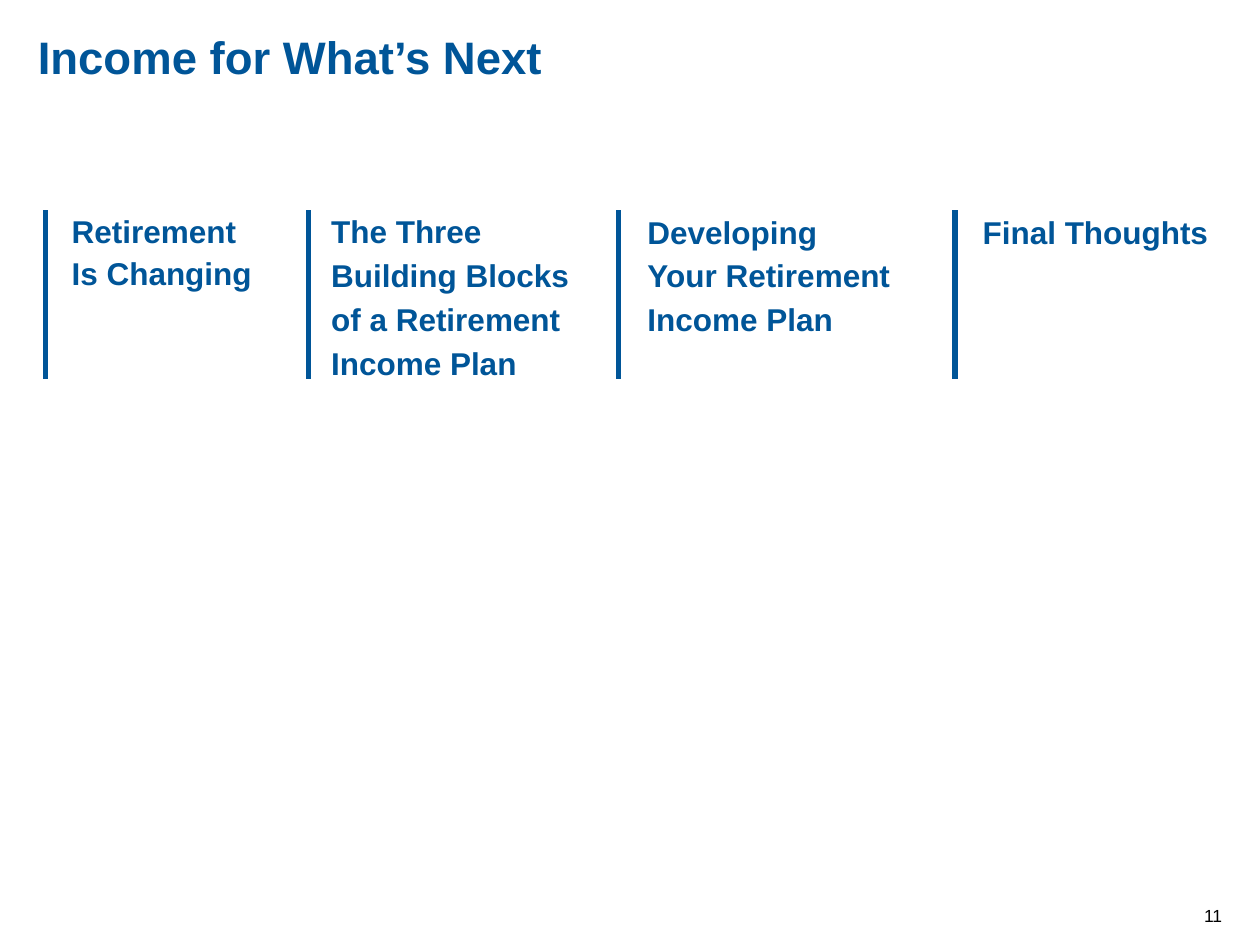
import dataclasses

import lxml.etree
import pptx
import pptx.dml.color
import pptx.enum.shapes
import pptx.enum.text
import pptx.oxml.ns
import pptx.slide
import pptx.text.text
import pptx.util

Inches = pptx.util.Inches
Pt = pptx.util.Pt
Anchor = pptx.enum.text.MSO_ANCHOR
Align = pptx.enum.text.PP_ALIGN
AutoSize = pptx.enum.text.MSO_AUTO_SIZE

COLORS = {"blue": "005598", "black": "000000"}
RULE_TOP, RULE_BOTTOM = 1.67, 3.01
FLUSH_FRAME = {
    "word_wrap": True,
    "auto_size": AutoSize.NONE,
    "margin_left": 0,
    "margin_top": 0,
    "margin_right": 0,
    "margin_bottom": 0,
}


@dataclasses.dataclass(frozen=True)
class Topic:
    """An agenda topic with the vertical rule at its left."""

    rule_left: float
    left: float
    top: float
    width: float
    height: float
    spacing: int
    paragraphs: tuple[tuple[str, ...], ...]


TOPICS = (
    Topic(0.36, 0.47, 1.6, 2.23, 0.77, 24, (("Retirement", "Is Changing"),)),
    Topic(2.45, 2.53, 1.59, 2.66, 1.5, 25,
          (("The Three", "Building Blocks", "of a Retirement"), ("Income Plan",))),
    Topic(4.91, 5.04, 1.59, 2.48, 1.15, 25,
          (("Developing", "Your Retirement Income Plan"),)),
    Topic(7.58, 7.7, 1.61, 2.48, 0.41, 24, (("Final Thoughts",),)),
)


def apply_format(target: object, values: dict) -> None:
    """Set each named attribute on the target."""
    for name, value in values.items():
        setattr(target, name, value)


def write_lines(para: pptx.text.text._Paragraph, lines: tuple[str, ...],
                size: int, color: str, bold: bool) -> None:
    """Fill a paragraph with formatted lines."""
    for index, line in enumerate(lines):
        if index:
            para.add_line_break()
        span = para.add_run()
        span.text = line
        apply_format(span.font, {"name": "Arial", "size": Pt(size), "bold": bold})
        span.font.color.rgb = pptx.dml.color.RGBColor.from_string(COLORS[color])


def draw_title(page: pptx.slide.Slide, text: str) -> None:
    """Place and fill the title placeholder."""
    box = page.shapes.title
    apply_format(box, {"left": Inches(0.3), "top": Inches(0.23),
                       "width": Inches(7), "height": Inches(0.8)})
    apply_format(box.text_frame, FLUSH_FRAME | {"vertical_anchor": Anchor.TOP})
    para = box.text_frame.paragraphs[0]
    para.alignment = Align.LEFT
    write_lines(para, (text,), 26, "blue", True)


def draw_page_number(page: pptx.slide.Slide, text: str) -> None:
    """Write the page number in the lower right corner."""
    box = page.shapes.add_textbox(Inches(9.3), Inches(7.15), Inches(0.4), Inches(0.2))
    apply_format(box.text_frame, FLUSH_FRAME | {"vertical_anchor": Anchor.BOTTOM})
    para = box.text_frame.paragraphs[0]
    para.alignment = Align.RIGHT
    write_lines(para, (text,), 10, "black", False)


def draw_topic(page: pptx.slide.Slide, topic: Topic) -> None:
    """Draw a topic's text and its vertical rule."""
    box = page.shapes.add_textbox(Inches(topic.left), Inches(topic.top),
                                  Inches(topic.width), Inches(topic.height))
    frame = box.text_frame
    apply_format(frame, {"word_wrap": True, "auto_size": AutoSize.SHAPE_TO_FIT_TEXT})
    for index, lines in enumerate(topic.paragraphs):
        para = frame.add_paragraph() if index else frame.paragraphs[0]
        para.line_spacing = Pt(topic.spacing)
        write_lines(para, lines, 18, "blue", True)

    rule = page.shapes.add_connector(
        pptx.enum.shapes.MSO_CONNECTOR.STRAIGHT,
        Inches(topic.rule_left), Inches(RULE_TOP),
        Inches(topic.rule_left), Inches(RULE_BOTTOM))
    rule.line.width = Pt(3)
    rule.line.color.rgb = pptx.dml.color.RGBColor.from_string(COLORS["blue"])
    lxml.etree.SubElement(rule.element.spPr, pptx.oxml.ns.qn("a:effectLst"))


def main() -> None:
    """Build and save the agenda slide."""
    deck = pptx.Presentation()
    apply_format(deck, {"slide_width": Inches(10), "slide_height": Inches(7.5)})
    page = deck.slides.add_slide(deck.slide_layouts[5])
    draw_title(page, "Income for What’s Next")
    for topic in TOPICS:
        draw_topic(page, topic)
    draw_page_number(page, "11")
    deck.save("out.pptx")


if __name__ == "__main__":
    main()
